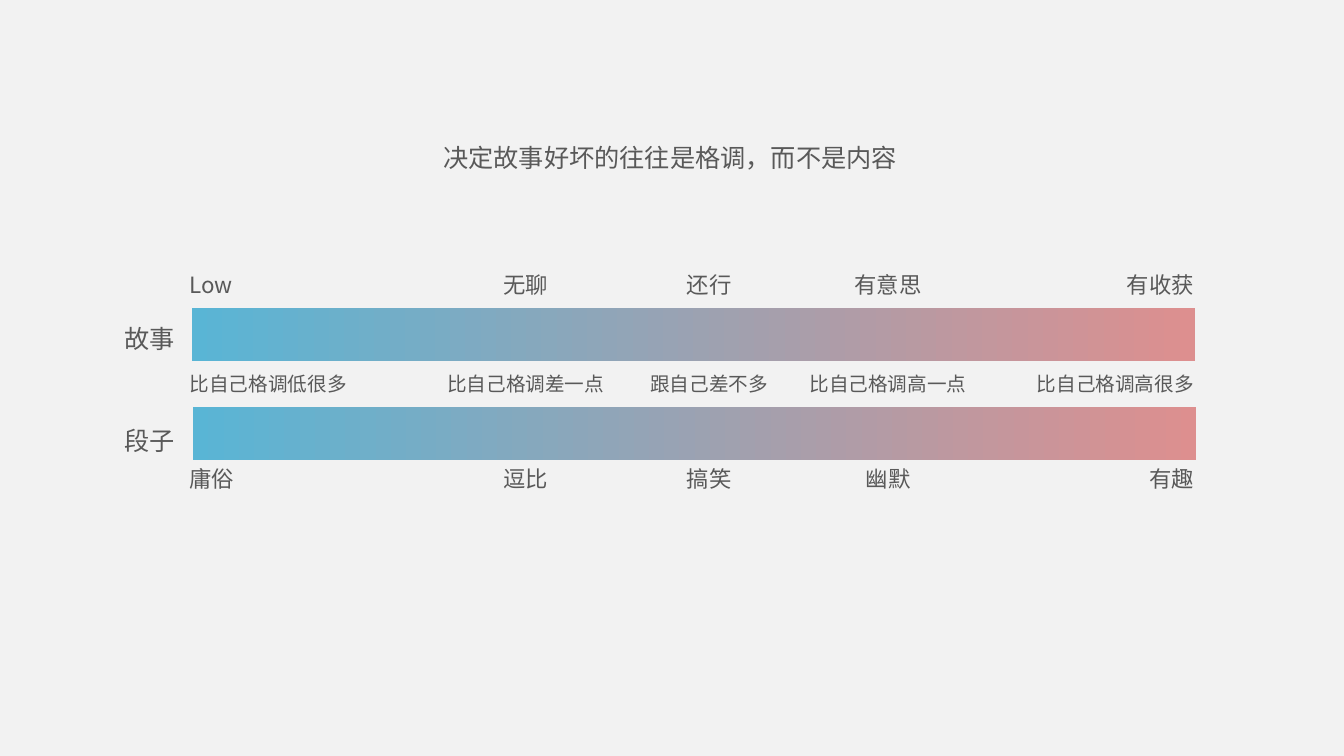
import pptx
import pptx.util
from pptx.dml.color import RGBColor
from pptx.enum.shapes import MSO_SHAPE
from pptx.enum.text import MSO_ANCHOR, MSO_AUTO_SIZE, PP_ALIGN
from pptx.oxml.ns import qn
from pptx.util import Cm

# Content
TITLE = "决定故事好坏的往往是格调，而不是内容"
BARS = [  # label, label top, bar left and bar top in cm
    ("故事", 7.63, 4.84, 7.75),
    ("段子", 10.21, 4.87, 10.25),
]
SCALES = [  # top in cm, text size, words from low to high
    (6.70, 16, ["Low", "无聊", "还行", "有意思", "有收获"]),
    (9.25, 14, ["比自己格调低很多", "比自己格调差一点", "跟自己差不多",
                "比自己格调高一点", "比自己格调高很多"]),
    (11.59, 16, ["庸俗", "逗比", "搞笑", "幽默", "有趣"]),
]

# Layout: anchor in cm and the alignment of the words on it
COLUMNS = [(4.53, PP_ALIGN.LEFT), (13.25, PP_ALIGN.CENTER), (17.87, PP_ALIGN.CENTER),
           (22.38, PP_ALIGN.CENTER), (30.34, PP_ALIGN.RIGHT)]
SHARE_LEFT = {PP_ALIGN.LEFT: 0, PP_ALIGN.CENTER: 0.5, PP_ALIGN.RIGHT: 1}
BAR_WIDTH, BAR_HEIGHT = 25.27, 1.35
LABEL_LEFT, LABEL_WIDTH, LABEL_HEIGHT = 2.89, 1.82, 1.27
TEXT_HEIGHT, CM_PER_POINT = 0.90, 2.54 / 72
TEXT_MARGIN = 0.60  # both insets and a little slack, so that no word wraps
FONT = "Noto Sans CJK SC"
COLORS = {"background": "F2F2F2", "text": "595959", "low": "59B5D5", "high": "DD8F8F"}


def color(name):
    return RGBColor.from_string(COLORS[name])


def place(shape, left, top, width, height):
    shape.left, shape.top, shape.width, shape.height = map(Cm, (left, top, width, height))


def write(shape, text, size, alignment=PP_ALIGN.LEFT, spacing=1.0):
    frame = shape.text_frame
    frame.text = text
    frame.word_wrap = False
    frame.auto_size = MSO_AUTO_SIZE.SHAPE_TO_FIT_TEXT
    frame.vertical_anchor = MSO_ANCHOR.TOP
    paragraph = frame.paragraphs[0]
    paragraph.alignment = alignment
    paragraph.line_spacing = spacing
    font = paragraph.runs[0].font
    font.name, font.size = FONT, pptx.util.Pt(size)
    font.color.rgb = color("text")
    east_asian = paragraph.runs[0]._r.get_or_add_rPr().makeelement(
        qn("a:ea"), {"typeface": FONT})
    font._element.find(qn("a:latin")).addnext(east_asian)


def add_text(slide, left, top, width, height, *style):
    box = slide.shapes.add_textbox(*map(Cm, (left, top, width, height)))
    write(box, *style)


def add_bar(slide, left, top):
    bar = slide.shapes.add_shape(
        MSO_SHAPE.RECTANGLE, *map(Cm, (left, top, BAR_WIDTH, BAR_HEIGHT)))
    bar.shadow.inherit = False
    bar.line.fill.background()
    bar.fill.gradient()
    bar.fill.gradient_angle = 0
    for stop, name in zip(bar.fill.gradient_stops, ("low", "high")):
        stop.color.rgb = color(name)


def main():
    presentation = pptx.Presentation()
    presentation.slide_width, presentation.slide_height = Cm(33.87), Cm(19.05)
    slide = presentation.slides.add_slide(presentation.slide_layouts[5])
    slide.background.fill.solid()
    slide.background.fill.fore_color.rgb = color("background")

    # Title
    place(slide.shapes.title, 10.92, 3.08, 12.06, 1.27)
    write(slide.shapes.title, TITLE, 18, PP_ALIGN.LEFT, 1.5)

    # Gradient bars with their labels
    for label, label_top, bar_left, bar_top in BARS:
        add_bar(slide, bar_left, bar_top)
        add_text(slide, LABEL_LEFT, label_top, LABEL_WIDTH, LABEL_HEIGHT,
                 label, 18, PP_ALIGN.LEFT, 1.5)

    # Words along the bars
    for top, size, words in SCALES:
        for word, (anchor, alignment) in zip(words, COLUMNS):
            ems = 2 if word.isascii() else len(word)
            width = ems * size * CM_PER_POINT + TEXT_MARGIN
            add_text(slide, anchor - SHARE_LEFT[alignment] * width, top, width,
                     TEXT_HEIGHT, word, size, alignment)

    presentation.save("out.pptx")


if __name__ == "__main__":
    main()
